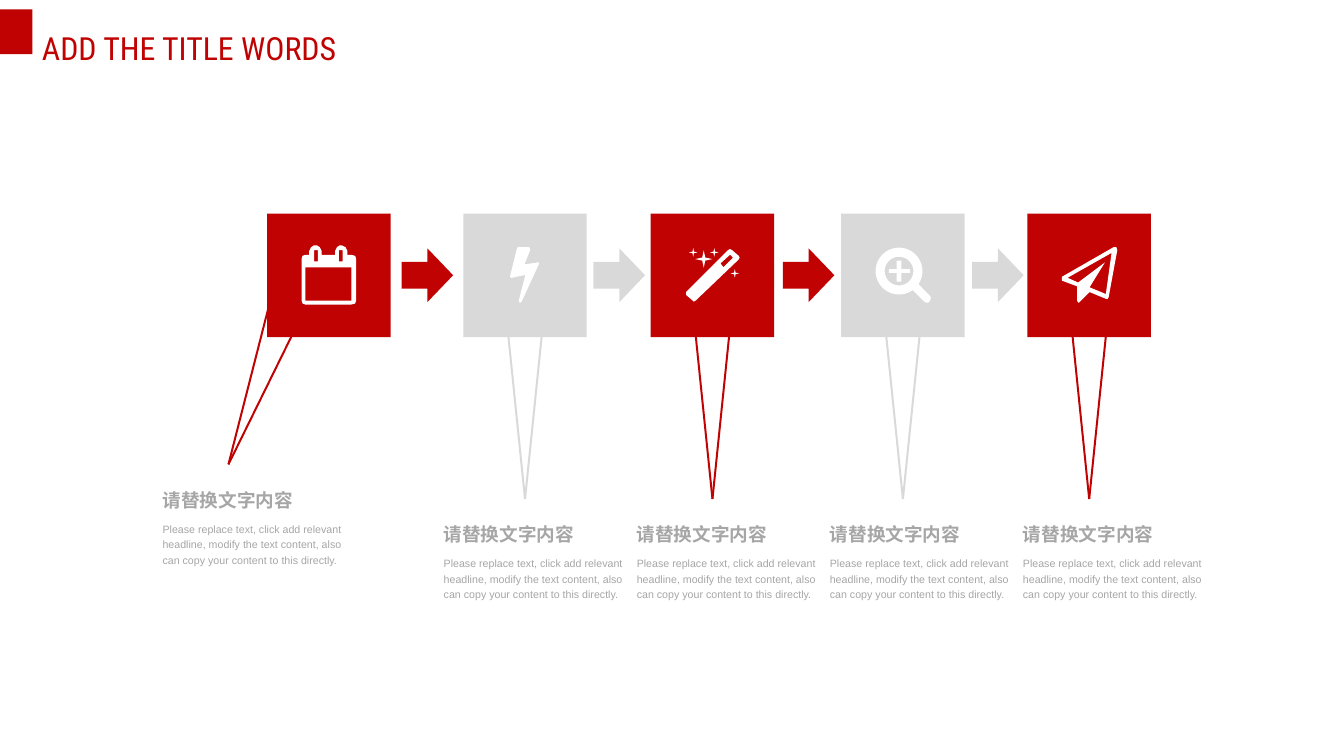
"""Build a slide of five linked steps, each with an icon, a pointer and a caption."""
from dataclasses import dataclass
from math import cos, pi, radians, sin
from typing import Optional

from lxml import etree
from pptx import Presentation
from pptx import util as u
from pptx.dml.color import RGBColor
from pptx.enum import shapes, text
from pptx.oxml.ns import qn
from pptx.slide import Slide
from pptx.text.text import TextFrame

Point = tuple[float, float]
Contour = list[Point]


@dataclass(frozen=True)
class Theme:
    red: RGBColor = RGBColor(0xC0, 0x02, 0x02)
    silver: RGBColor = RGBColor(0xD9, 0xD9, 0xD9)
    white: RGBColor = RGBColor(0xFF, 0xFF, 0xFF)
    caption: RGBColor = RGBColor(0xA6, 0xA6, 0xA6)
    title_font: str = "Roboto Condensed"
    body_font: str = "Arial"
    title_size: int = 24
    heading_size: int = 14
    body_size: int = 8
    pointer_width: float = 1.5


@dataclass(frozen=True)
class Step:
    color: RGBColor
    left: float
    icon: list[Contour]
    caption: Point
    arrow_left: Optional[float] = None
    pointer: Optional[tuple[Point, Point, Point]] = None


THEME = Theme()
HEADING = "请替换文字内容"
BODY = ("Please replace text, click add relevant headline, modify the text "
        "content, also can copy your content to this directly.")
SQUARE_TOP, SQUARE_SIZE = 5.68, 3.28
ARROW_TOP, ARROW_WIDTH, ARROW_HEIGHT = 6.6, 1.37, 1.43
POINTER_TIP, POINTER_HALF = 13.26, 0.44
CAPTION_LEFT, CAPTION_TOP, CAPTION_PITCH = 11.79, 13.66, 5.13
ICON_CELL = u.Cm(2.54) / 100


def box(left: float, top: float, right: float, bottom: float) -> Contour:
    return [(left, top), (right, top), (right, bottom), (left, bottom)]


def arc(x: float, y: float, radius: float, start: int = 0, end: int = 360) -> Contour:
    angles = [radians(start + (end - start) * i / 48) for i in range(49)]
    return [(x + radius * cos(a), y + radius * sin(a)) for a in angles]


def sparkle(x: float, y: float, radius: float) -> Contour:
    radii = [radius, radius / 4] * 4
    return [(x + r * cos(i * pi / 4), y + r * sin(i * pi / 4))
            for i, r in enumerate(radii)]


CALENDAR = [
    [(93, 91), (92, 94), (88, 95), (40, 95), (37, 94), (36, 91), (36, 47),
     (37, 44), (40, 43), (44, 43), (44, 39), (46, 35), (49, 33), (52, 33),
     (55, 35), (57, 39), (57, 43), (71, 43), (71, 39), (73, 35), (76, 33),
     (78, 33), (82, 35), (84, 39), (84, 43), (88, 43), (92, 44), (93, 47)],
    box(40, 56, 88, 91), box(49, 38, 53, 50), box(75, 38, 79, 50),
]
BOLT = [
    [(79, 53), (61, 92), (60, 93), (59, 93), (58, 91), (65, 64), (51, 67),
     (50, 67), (49, 66), (49, 65), (56, 37), (57, 35), (69, 35), (70, 37),
     (70, 38), (64, 53), (78, 51), (79, 51)],
]
WAND = [
    [(92, 48), (47, 91), (45, 92), (44, 91), (37, 85), (37, 82), (81, 38),
     (83, 37), (85, 38), (92, 44), (93, 46)],
    [(86, 46), (83, 43), (73, 52), (76, 56)],
    sparkle(44.5, 40.5, 4.5), sparkle(55.5, 47.5, 9),
    sparkle(66.5, 40.5, 4.5), sparkle(88, 62.5, 4.5),
]
MAGNIFIER = [
    arc(60.5, 60, 24.5, 54, 394)
    + [(93, 86), (94, 88), (93, 91), (91, 93), (89, 93), (87, 92)],
    arc(60.5, 60, 15),
    [(50, 58), (58, 58), (58, 49), (63, 49), (63, 58), (72, 58),
     (72, 62), (63, 62), (63, 71), (58, 71), (58, 62), (50, 62)],
]
PLANE = [
    [(94, 38), (85, 87), (84, 89), (82, 89), (65, 82), (55, 92), (54, 93),
     (53, 93), (52, 91), (52, 76), (36, 70), (36, 66), (90, 35), (93, 35)],
    [(88, 41), (42, 67), (53, 72), (81, 51), (65, 77), (82, 84)],
]


def caption_at(column: int) -> Point:
    return CAPTION_LEFT + column * CAPTION_PITCH, CAPTION_TOP


STEPS = [
    Step(THEME.red, 7.1, CALENDAR, (4.32, 12.75), 10.67,
         ((7.14, 8.15), (6.07, 12.34), (7.98, 8.46))),
    Step(THEME.silver, 12.31, BOLT, caption_at(0), 15.77),
    Step(THEME.red, 17.29, WAND, caption_at(1), 20.8),
    Step(THEME.silver, 22.35, MAGNIFIER, caption_at(2), 25.83),
    Step(THEME.red, 27.3, PLANE, caption_at(3)),
]


def paint(shape, color: RGBColor) -> None:
    shape.shadow.inherit = False
    shape.fill.solid()
    shape.fill.fore_color.rgb = color
    shape.line.fill.background()


def add_block(slide: Slide, kind: shapes.MSO_SHAPE, left: float, top: float,
              width: float, height: float, color: RGBColor) -> None:
    shape = slide.shapes.add_shape(
        kind, u.Cm(left), u.Cm(top), u.Cm(width), u.Cm(height))
    paint(shape, color)


def add_icon(slide: Slide, contours: list[Contour], left: float, top: float) -> None:
    scaled = [[(x * ICON_CELL, y * ICON_CELL) for x, y in contour]
              for contour in contours]
    builder = slide.shapes.build_freeform(*scaled[0][0])
    builder.add_line_segments(scaled[0][1:])
    for contour in scaled[1:]:
        builder.move_to(*contour[0])
        builder.add_line_segments(contour[1:])
    paint(builder.convert_to_shape(u.Cm(left), u.Cm(top)), THEME.white)


def add_pointer(slide: Slide, step: Step) -> None:
    center, base = step.left + SQUARE_SIZE / 2, SQUARE_TOP + SQUARE_SIZE
    start, tip, end = step.pointer or (
        (center - POINTER_HALF, base), (center, POINTER_TIP),
        (center + POINTER_HALF, base))
    for side in (start, end):
        connector = slide.shapes.add_connector(
            shapes.MSO_CONNECTOR.STRAIGHT, *map(u.Cm, tip + side))
        connector.line.color.rgb = step.color
        connector.line.width = u.Pt(THEME.pointer_width)
        etree.SubElement(connector._element.spPr, qn("a:effectLst"))


def write(frame: TextFrame, words: str, font: str, size: int, color: RGBColor,
          spacing: float, bold: bool = False) -> None:
    paragraph = frame.paragraphs[0]
    paragraph.alignment = text.PP_ALIGN.LEFT
    paragraph.line_spacing = spacing
    run = paragraph.add_run()
    run.text = words
    run.font.name, run.font.size, run.font.bold = font, u.Pt(size), bold
    run.font.color.rgb = color


def add_text(slide: Slide, words: str, left: float, top: float, width: float,
             height: float, size: int, inset: float = 0, bold: bool = False) -> None:
    frame = slide.shapes.add_textbox(
        u.Cm(left), u.Cm(top), u.Cm(width), u.Cm(height)).text_frame
    frame.word_wrap = True
    frame.margin_left = frame.margin_right = 0
    frame.margin_top = frame.margin_bottom = u.Cm(inset)
    frame.vertical_anchor = text.MSO_ANCHOR.MIDDLE if inset else text.MSO_ANCHOR.TOP
    write(frame, words, THEME.body_font, size, THEME.caption, 1.2, bold)


def add_title(slide: Slide, words: str) -> None:
    title = slide.shapes.title
    title.left, title.top, title.width, title.height = map(
        u.Cm, (0.86, 0.13, 9, 1.6))
    title.text_frame.auto_size = text.MSO_AUTO_SIZE.NONE
    title.text_frame.vertical_anchor = text.MSO_ANCHOR.TOP
    write(title.text_frame, words, THEME.title_font, THEME.title_size, THEME.red, 1.5)


def add_step(slide: Slide, step: Step) -> None:
    add_pointer(slide, step)
    add_block(slide, shapes.MSO_SHAPE.RECTANGLE, step.left, SQUARE_TOP,
              SQUARE_SIZE, SQUARE_SIZE, step.color)
    add_icon(slide, step.icon, step.left, SQUARE_TOP)
    if step.arrow_left is not None:
        add_block(slide, shapes.MSO_SHAPE.RIGHT_ARROW, step.arrow_left, ARROW_TOP,
                  ARROW_WIDTH, ARROW_HEIGHT, step.color)
    left, top = step.caption
    add_text(slide, HEADING, left, top, 3.71, 0.94, THEME.heading_size, 0.28, True)
    add_text(slide, BODY, left, top + 1.08, 4.88, 1.19, THEME.body_size)


def main() -> None:
    presentation = Presentation()
    presentation.slide_width, presentation.slide_height = u.Cm(35.71), u.Cm(20.09)
    slide = presentation.slides.add_slide(presentation.slide_layouts[5])
    add_block(slide, shapes.MSO_SHAPE.RECTANGLE, 0, 0.25, 0.86, 1.19, THEME.red)
    add_title(slide, "ADD THE TITLE WORDS")
    for step in STEPS:
        add_step(slide, step)
    presentation.save("out.pptx")


if __name__ == "__main__":
    main()
